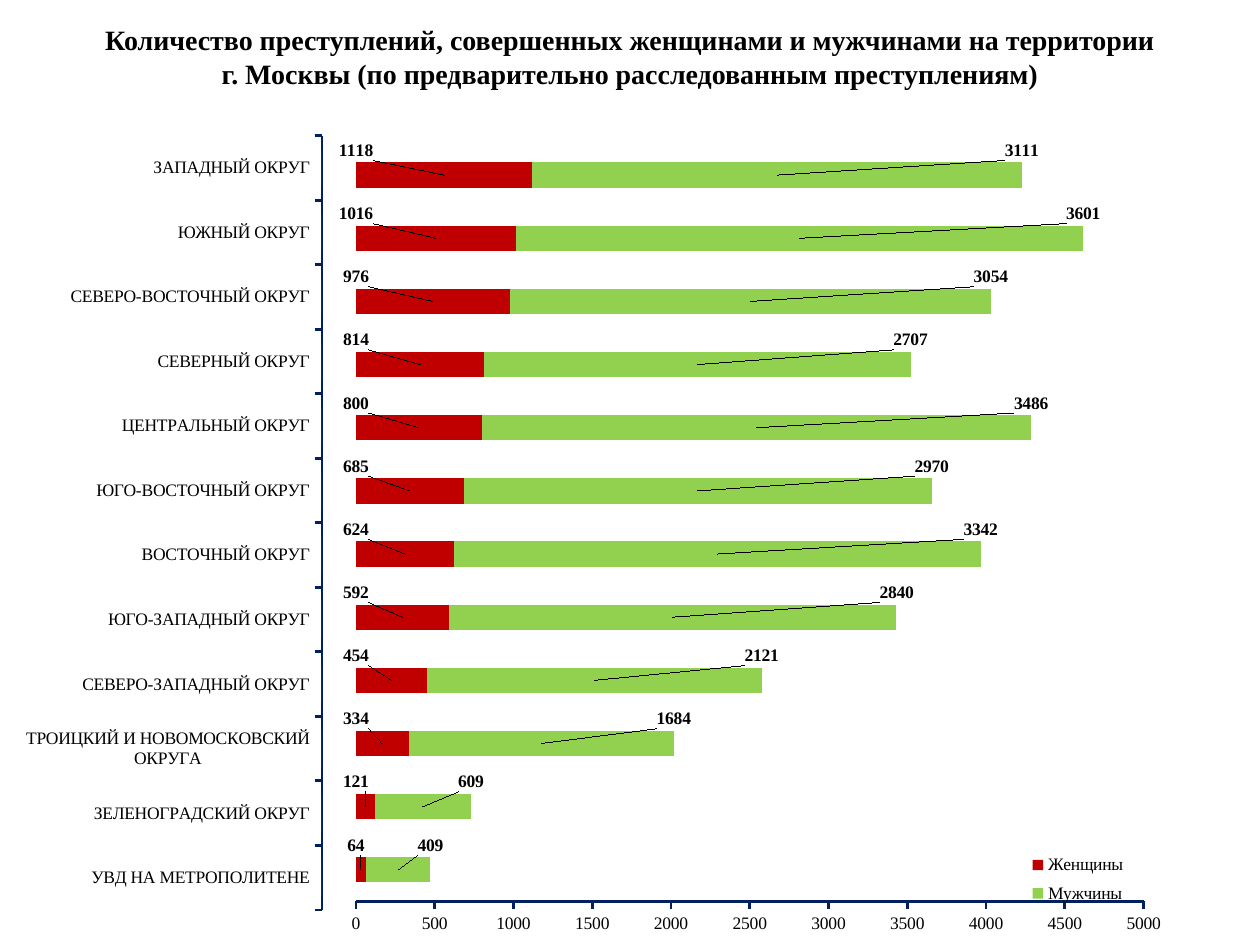
from dataclasses import dataclass

from lxml.etree import SubElement
from pptx import Presentation
from pptx.chart.data import CategoryChartData as Data
from pptx.dml.color import RGBColor as RGB
from pptx.enum.chart import XL_CHART_TYPE as Kind, XL_LABEL_POSITION as Spot
from pptx.enum.chart import XL_LEGEND_POSITION as Side, XL_TICK_MARK as Tick
from pptx.enum.text import MSO_ANCHOR as Anchor, PP_ALIGN as Align
from pptx.oxml import parse_xml
from pptx.oxml.ns import nsdecls, qn
from pptx.util import Inches, Pt


@dataclass(frozen=True)
class Theme:
    face: str = "Times New Roman"
    base: str = "Calibri"
    ink: str = "000000"
    axis: str = "002060"
    women: str = "C00000"
    men: str = "92D050"
    blue: str = "4F81BD"
    red: str = "C0504D"
    head: int = 16
    body: int = 10
    rule: float = 1.5


TITLE = [
    "Количество преступлений, совершенных женщинами и мужчинами на территории",
    "г. Москвы (по предварительно расследованным преступлениям)",
]
# Bottom to top: district, women, men
ROWS = [
    ("УВД НА МЕТРОПОЛИТЕНЕ", 64, 409),
    ("ЗЕЛЕНОГРАДСКИЙ ОКРУГ", 121, 609),
    ("ТРОИЦКИЙ И НОВОМОСКОВСКИЙ ОКРУГА", 334, 1684),
    ("СЕВЕРО-ЗАПАДНЫЙ ОКРУГ", 454, 2121),
    ("ЮГО-ЗАПАДНЫЙ ОКРУГ", 592, 2840),
    ("ВОСТОЧНЫЙ ОКРУГ", 624, 3342),
    ("ЮГО-ВОСТОЧНЫЙ ОКРУГ", 685, 2970),
    ("ЦЕНТРАЛЬНЫЙ ОКРУГ", 800, 3486),
    ("СЕВЕРНЫЙ ОКРУГ", 814, 2707),
    ("СЕВЕРО-ВОСТОЧНЫЙ ОКРУГ", 976, 3054),
    ("ЮЖНЫЙ ОКРУГ", 1016, 3601),
    ("ЗАПАДНЫЙ ОКРУГ", 1118, 3111),
]
TOP = 5000
SPAN = 0.815  # plot width as a share of the bar chart
LIFT = -0.03  # label shift above its bar


def place(node, index, **parts):
    """Give a chart part a manual layout, as shares of the chart."""
    for old in node.findall(qn("c:layout")):
        node.remove(old)
    lay = parse_xml(f"<c:layout {nsdecls('c')}/>")
    man = SubElement(lay, qn("c:manualLayout"))
    for name, val in parts.items():
        SubElement(man, qn(f"c:{name}")).set("val", str(val))
    node.insert(index, lay)


class Deck:
    def __init__(self, theme):
        self.theme = theme
        self.prs = Presentation()
        self.prs.slide_width, self.prs.slide_height = Inches(10), Inches(7.5)
        self.slide = self.prs.slides.add_slide(self.prs.slide_layouts[5])

    def font(self, font, face, size, bold=False):
        font.name, font.size, font.bold = face, Pt(size), bold
        font.color.rgb = RGB.from_string(self.theme.ink)

    def title(self, lines, x, y, w, h):
        box = self.slide.shapes.title
        box.left, box.top, box.width, box.height = map(Inches, (x, y, w, h))
        frame = box.text_frame
        frame.text = "\n".join(lines)
        frame.word_wrap, frame.vertical_anchor = True, Anchor.TOP
        for para in frame.paragraphs:
            para.alignment = Align.CENTER
            for run in para.runs:
                self.font(run.font, self.theme.face, self.theme.head, True)

    def chart(self, kind, cats, series, box, plot):
        """Add a clear bar chart; series holds (name, values, colour)."""
        data = Data()
        data.categories = cats
        for name, vals, _ in series:
            data.add_series(name, vals)
        chart = self.slide.shapes.add_chart(
            kind, *map(Inches, box), data).chart
        chart.has_title = chart.has_legend = False
        self.font(chart.font, self.theme.base, self.theme.body)
        root = chart.element if hasattr(chart, "element") else chart._chartSpace
        root.find(qn("c:chart")).addnext(parse_xml(
            f"<c:spPr {nsdecls('c', 'a')}><a:noFill/>"
            "<a:ln><a:noFill/></a:ln></c:spPr>"))
        x, y, w, h = plot
        place(root.find(".//" + qn("c:plotArea")), 0, layoutTarget="inner",
              xMode="edge", yMode="edge", x=x, y=y, w=w, h=h)
        bars = chart.plots[0]
        bars.gap_width, bars.vary_by_categories = 150, False
        for ser, (_, _, color) in zip(bars.series, series):
            ser.format.fill.solid()
            ser.format.fill.fore_color.rgb = RGB.from_string(color)
        chart.value_axis.has_major_gridlines = False
        return chart

    def axis(self, axis):
        axis.major_tick_mark, axis.minor_tick_mark = Tick.OUTSIDE, Tick.NONE
        axis.format.line.color.rgb = RGB.from_string(self.theme.axis)
        axis.format.line.width = Pt(self.theme.rule)
        self.font(axis.tick_labels.font, self.theme.face, self.theme.body)

    def labels(self, series, side):
        """Move value labels above the bar's start (-1) or end (1)."""
        for i, val in enumerate(series.values):
            label = series.points[i].data_label
            self.font(label.font, self.theme.face, self.theme.body, True)
            label.position = Spot.CENTER
            shift = round(side * val / 2 / TOP * SPAN, 4)
            node = series._element.findall(".//" + qn("c:dLbl"))[i]
            place(node, 1, x=shift, y=LIFT)

    def legend(self, chart, x, y, w, h):
        chart.has_legend = True
        key = chart.legend
        key.position, key.include_in_layout = Side.RIGHT, False
        self.font(key.font, self.theme.face, self.theme.body)
        place(key._element, 1, xMode="edge", yMode="edge", x=x, y=y, w=w, h=h)


def main():
    theme = Theme()
    deck = Deck(theme)
    deck.title(TITLE, 0, 0.13, 10, 0.78)
    names, women, men = zip(*ROWS)

    zeros = [0] * len(ROWS)
    scale = deck.chart(
        Kind.BAR_CLUSTERED, names,
        [("Series 1", zeros, theme.blue), ("Series 2", zeros, theme.red)],
        (-0.24, 0.93, 10.24, 6.44), (0.273, 0.023, 0.458, 0.954))
    scale.value_axis.visible = False
    deck.axis(scale.category_axis)

    crime = deck.chart(
        Kind.BAR_STACKED, [str(i + 1) for i in range(len(ROWS))],
        [("Женщины", women, theme.women), ("Мужчины", men, theme.men)],
        (1.69, 0.99, 7.67, 6.51), (0.148, 0.023, SPAN, 0.924))
    crime.plots[0].overlap = 100
    crime.category_axis.visible = False
    axis = crime.value_axis
    axis.minimum_scale, axis.maximum_scale, axis.major_unit = 0, TOP, 500
    deck.axis(axis)
    for series, side in zip(crime.plots[0].series, (-1, 1)):
        deck.labels(series, side)
    deck.legend(crime, 0.83, 0.88, 0.13, 0.08)

    deck.prs.save("out.pptx")


if __name__ == "__main__":
    main()
